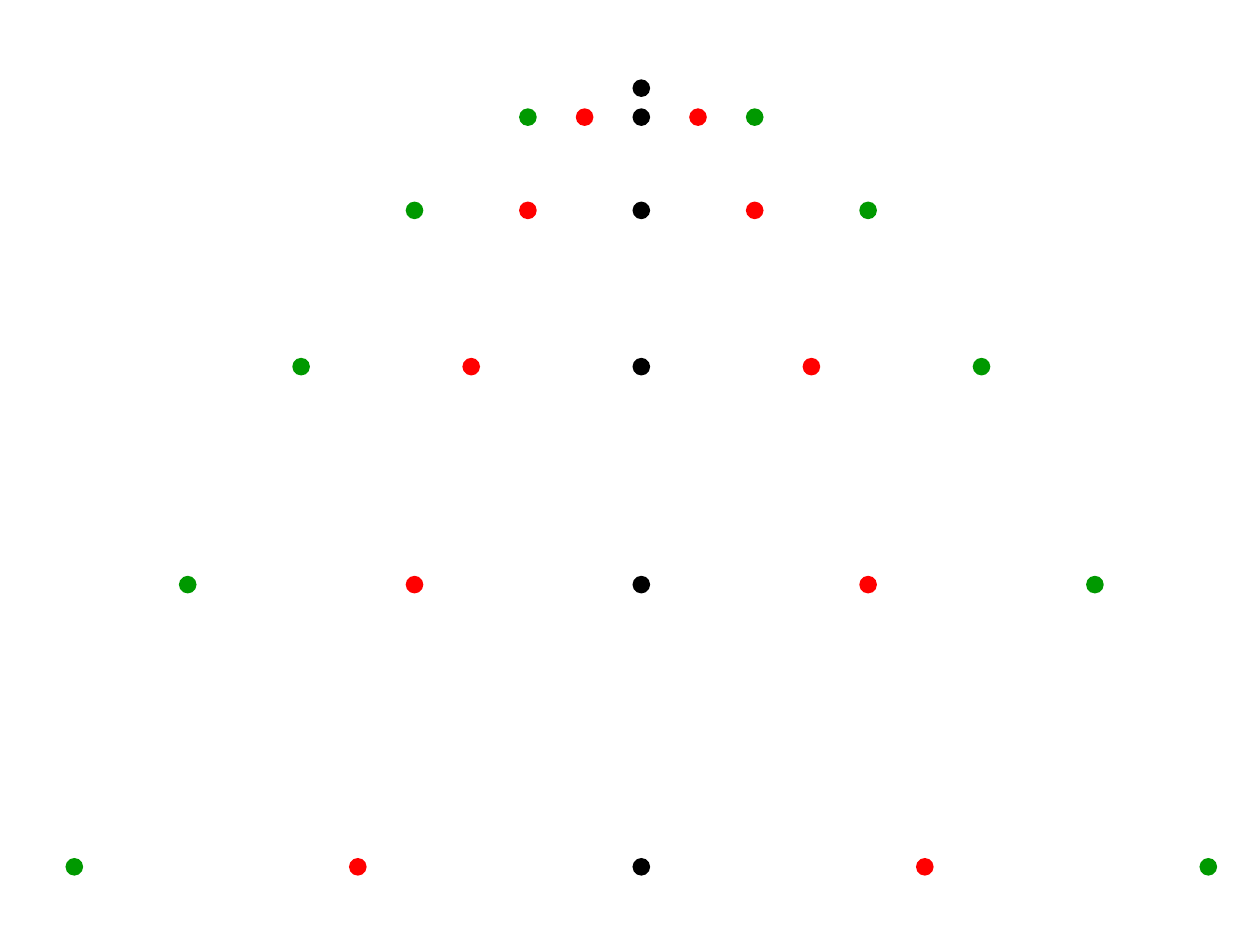
from pptx import Presentation
from pptx.dml.color import RGBColor
from pptx.enum.shapes import MSO_SHAPE
from pptx.util import Inches

OVAL = MSO_SHAPE.OVAL

DOT_SIZE = 0.14
CENTER_LEFT = 5.02
STEP = 0.45  # sideways shift per row for a slope of 1
ROW_TOPS = [0.63, 0.86, 1.6, 2.84, 4.57, 6.81]

# (colour, slope); a negative slope runs to the left
BRANCHES = [("FF0000", 1), ("009900", 2), ("FF0000", -1), ("009900", -2)]
AXIS_COLOR = "000000"


def add_dot(shapes, left, top, color):
    dot = shapes.add_shape(
        OVAL, Inches(left), Inches(top), Inches(DOT_SIZE), Inches(DOT_SIZE)
    )
    dot.shadow.inherit = False
    dot.fill.solid()
    dot.fill.fore_color.rgb = RGBColor.from_string(color)
    dot.line.fill.background()


def add_branch(shapes, color, slope, first_row):
    for row, top in enumerate(ROW_TOPS[first_row:], first_row):
        add_dot(shapes, CENTER_LEFT + slope * STEP * row, top, color)


def main():
    presentation = Presentation()
    presentation.slide_width = Inches(10)
    presentation.slide_height = Inches(7.5)
    slide = presentation.slides.add_slide(presentation.slide_layouts[6])

    for color, slope in BRANCHES:
        group = slide.shapes.add_group_shape()
        add_branch(group.shapes, color, slope, first_row=1)
    add_branch(slide.shapes, AXIS_COLOR, slope=0, first_row=0)

    presentation.save("out.pptx")


if __name__ == "__main__":
    main()
